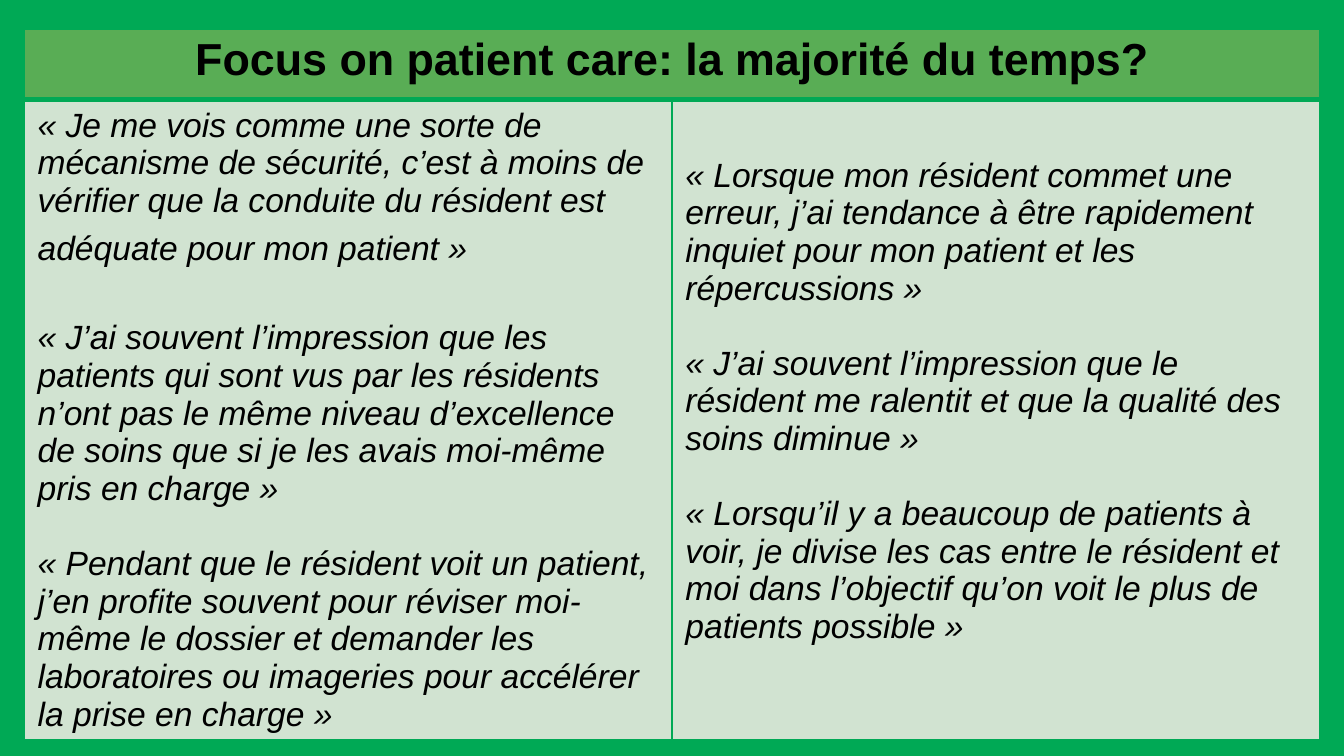
from lxml.etree import SubElement
from pptx import Presentation
from pptx.dml.color import RGBColor
from pptx.enum.text import PP_ALIGN
from pptx.oxml.ns import qn
from pptx.util import Inches, Pt

GREEN, HEADER, PALE, BLACK = "00A955", "59AD55", "D1E3D1", "000000"
LINE_HEIGHT = 1.117  # Arial line height as a share of the text size
INSET = 0.05

TITLE = "Focus on patient care: la majorité du temps?"
SAFETY_QUOTES = [
    "«\u00a0Je me vois comme une sorte de mécanisme de sécurité, c’est à moins de vérifier "
    "que la conduite du résident est adéquate pour mon patient\u00a0»",
    "«\u00a0J’ai souvent l’impression que les patients qui sont vus par les résidents n’ont pas "
    "le même niveau d’excellence de soins que si je les avais moi-même pris en charge\u00a0»",
    "«\u00a0Pendant que le résident voit un patient, j’en profite souvent pour réviser moi-même "
    "le dossier et demander les laboratoires ou imageries pour accélérer la prise en charge\u00a0»",
]
WORRY_QUOTES = [
    "«\u00a0Lorsque mon résident commet une erreur, j’ai tendance à être rapidement inquiet "
    "pour mon patient et les répercussions\u00a0»",
    "«\u00a0J’ai souvent l’impression que le résident me ralentit et que la qualité des soins "
    "diminue\u00a0»",
    "«\u00a0Lorsqu’il y a beaucoup de patients à voir, je divise les cas entre le résident et moi "
    "dans l’objectif qu’on voit le plus de patients possible\u00a0»",
]


def color(value):
    return RGBColor.from_string(value)


def paint_cell(cell, fill, top=1, bottom=1):
    cell.fill.solid()
    cell.fill.fore_color.rgb = color(fill)
    properties = cell._tc.get_or_add_tcPr()
    widths = {"a:lnL": 1, "a:lnR": 1, "a:lnT": top, "a:lnB": bottom}
    for place, (side, width) in enumerate(widths.items()):
        border = SubElement(properties, qn(side), w=str(Pt(width)))
        SubElement(SubElement(border, qn("a:solidFill")), qn("a:srgbClr"), val=GREEN)
        properties.insert(place, border)


def style(font, size, bold=False, italic=False):
    font.name, font.size = "Arial", Pt(size)
    font.bold, font.italic = bold, italic
    font.color.rgb = color(BLACK)


def write_quotes(cell, quotes, first_gap):
    """Write quotes one line apart; first_gap is the text size of the first gap."""
    frame = cell.text_frame
    for number, quote in enumerate(quotes):
        para = frame.add_paragraph() if number else frame.paragraphs[0]
        para.add_run().text = quote
        style(para.font, 18, italic=True)
        if number:
            gap = first_gap if number == 1 else 18
            para.space_before = Pt(round(gap * LINE_HEIGHT, 1))


def add_quote_table(page, left, top, width, height):
    holder = page.shapes.add_table(2, 2, left, top, width, height)
    table = holder.table
    for column in table.columns:
        column.width = width // 2
    table.rows[0].height = Inches(0.53)
    table.rows[1].height = Inches(4.51)
    holder.height = height  # the quotes stretch the second row

    # Header across both columns
    for column in range(2):
        paint_cell(table.cell(0, column), HEADER, bottom=3)
        paint_cell(table.cell(1, column), PALE, top=3)
    heading = table.cell(0, 0)
    heading.merge(table.cell(0, 1))
    para = heading.text_frame.paragraphs[0]
    para.text = TITLE
    para.alignment = PP_ALIGN.CENTER
    style(para.font, 24, bold=True)

    # Left quotes: the first one closes with a larger space
    safety, worry = table.cell(1, 0), table.cell(1, 1)
    write_quotes(safety, SAFETY_QUOTES, 24)
    span = safety.text_frame.paragraphs[0].add_run()
    span.text = " "
    span.font.size = Pt(24)

    # Right quotes start one heading line lower
    worry.margin_top = Inches(INSET) + Pt(24 * LINE_HEIGHT)
    write_quotes(worry, WORRY_QUOTES, 18)


def main():
    deck = Presentation()
    deck.slide_width = Inches(10)
    deck.slide_height = deck.slide_width * 9 // 16
    page = deck.slides.add_slide(deck.slide_layouts[6])
    page.background.fill.solid()
    page.background.fill.fore_color.rgb = color(GREEN)
    margin = Inches(0.18)
    top = int(deck.slide_height * 0.038)
    add_quote_table(page, margin, top, deck.slide_width - 2 * margin, Inches(5.73))
    deck.save("out.pptx")


if __name__ == "__main__":
    main()
